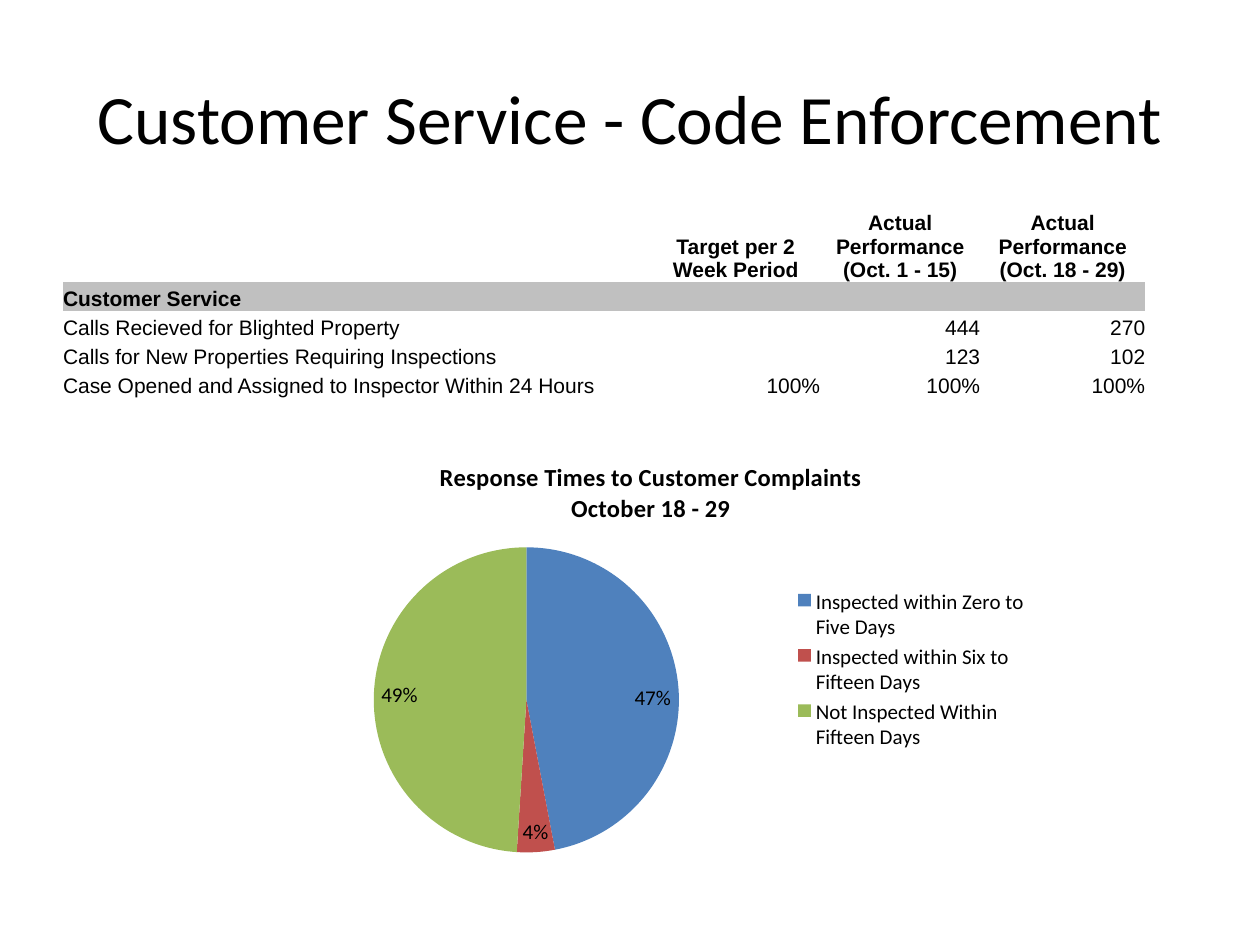
from lxml.etree import SubElement
from pptx import Presentation
from pptx.chart.data import CategoryChartData
from pptx.dml.color import RGBColor
from pptx.enum.chart import XL_CHART_TYPE as ChartType
from pptx.enum.chart import XL_LABEL_POSITION as LabelPos
from pptx.enum.chart import XL_LEGEND_POSITION as LegendPos
from pptx.enum.text import MSO_ANCHOR as Anchor
from pptx.enum.text import PP_ALIGN as Align
from pptx.oxml.ns import qn
from pptx.util import Inches, Pt

BLACK, WHITE, SILVER, GRAY = "000000", "FFFFFF", "C0C0C0", "BFBFBF"
PLAIN_TABLE = "{2D5ABB26-0587-4C30-8999-92F81FD0307C}"

COLUMNS = (4.67, 1.34, 1.27, 1.31)
HEADER_HEIGHT, ROW_HEIGHT = 0.66, 0.23
PERFORMANCE = (
    ("", "Target per 2 Week Period", "Actual Performance (Oct. 1 - 15)",
     "Actual Performance (Oct. 18 - 29)"),
    ("Customer Service", "", "", ""),
    ("Calls Recieved for Blighted Property", "", "444", "270"),
    ("Calls for New Properties Requiring Inspections", "", "123", "102"),
    ("Case Opened and Assigned to Inspector Within 24 Hours",
     "100%", "100%", "100%"),
)
ROW_FILLS = (
    (None,) * 4,
    (SILVER, SILVER, SILVER, GRAY),
    (WHITE, WHITE, WHITE, None),
    (WHITE,) * 4,
    (None,) * 4,
)
RESPONSES = (
    ("Inspected within Zero to Five Days", 47, "4F81BD"),
    ("Inspected within Six to Fifteen Days", 4, "C0504D"),
    ("Not Inspected Within Fifteen Days", 49, "9BBB59"),
)


def color(hex_code):
    return RGBColor.from_string(hex_code)


def style(font, size, face, bold=False):
    font.size, font.name, font.bold = Pt(size), face, bold
    font.color.rgb = color(BLACK)


def add_run(paragraph, text, size, face, bold=False):
    run = paragraph.add_run()
    run.text = text
    style(run.font, size, face, bold)


def add_title(slide, text):
    frame = slide.shapes.add_textbox(
        Inches(0.5), Inches(0.3), Inches(9), Inches(1.25)).text_frame
    frame.word_wrap = True
    frame.vertical_anchor = Anchor.MIDDLE
    heading = frame.paragraphs[0]
    heading.alignment = Align.CENTER
    add_run(heading, text, 39.6, "Calibri")


def fill_cell(cell, text, alignment, bold, fill):
    cell.margin_left = cell.margin_right = 0
    cell.margin_top = cell.margin_bottom = 0
    cell.vertical_anchor = Anchor.BOTTOM
    if fill:
        cell.fill.solid()
        cell.fill.fore_color.rgb = color(fill)
    else:
        cell.fill.background()
    paragraph = cell.text_frame.paragraphs[0]
    paragraph.alignment = alignment
    if text:
        add_run(paragraph, text, 12, "Arial", bold)
    else:  # keeps an empty cell from stretching its row
        SubElement(paragraph._p, qn("a:endParaRPr"), sz="1200")


def add_performance_table(slide):
    heights = [HEADER_HEIGHT] + [ROW_HEIGHT] * (len(PERFORMANCE) - 1)
    table = slide.shapes.add_table(
        len(heights), len(COLUMNS), Inches(0.5), Inches(1.58),
        Inches(sum(COLUMNS)), Inches(sum(heights))).table
    table.first_row = table.horz_banding = False
    table._tbl.tblPr.find(qn("a:tableStyleId")).text = PLAIN_TABLE
    for column, width in zip(table.columns, COLUMNS):
        column.width = Inches(width)
    for r, (texts, fills) in enumerate(zip(PERFORMANCE, ROW_FILLS)):
        table.rows[r].height = Inches(heights[r])
        for c, (text, fill) in enumerate(zip(texts, fills)):
            numeric = Align.CENTER if r == 0 else Align.RIGHT
            fill_cell(table.cell(r, c), text, numeric if c else Align.LEFT,
                      r < 2, fill)


def place(layout, target=None, **shares):
    """Fix a chart part at shares of the chart's size."""
    manual = SubElement(layout, qn("c:manualLayout"))
    if target:
        SubElement(manual, qn("c:layoutTarget"), val=target)
    for axis in "xy":
        SubElement(manual, qn(f"c:{axis}Mode"), val="edge")
    for side in "xywh":
        SubElement(manual, qn(f"c:{side}"), val=str(shares[side]))


def new_layout(parent, previous):
    layout = parent.makeelement(qn("c:layout"))
    parent.find(qn(previous)).addnext(layout)
    return layout


def add_response_pie(slide):
    data = CategoryChartData(number_format="0")
    data.categories = [name for name, _, _ in RESPONSES]
    data.add_series("Series 1", [share for _, share, _ in RESPONSES])
    chart = slide.shapes.add_chart(
        ChartType.PIE, Inches(2.08), Inches(3.5), Inches(6.17), Inches(3.67),
        data).chart
    style(chart.font, 10, "Calibri")

    # Title
    chart.has_title = True
    title = chart.chart_title.text_frame
    add_run(title.paragraphs[0], "Response Times to Customer Complaints",
            14, "Calibri", True)
    add_run(title.add_paragraph(), "October 18 - 29", 14, "Calibri", True)
    chart.chart_title.include_in_layout = False

    # Slices and their labels
    pie = chart.plots[0]
    pie.vary_by_categories = True
    for i, (_, _, slice_color) in enumerate(RESPONSES):
        slice_fill = pie.series[0].points[i].format.fill
        slice_fill.solid()
        slice_fill.fore_color.rgb = color(slice_color)
    labels = pie.series[0].data_labels
    labels.show_percentage, labels.show_value = True, False
    labels.number_format, labels.number_format_is_linked = "0%", False
    labels.position = LabelPos.INSIDE_END
    style(labels.font, 12, "Calibri")

    # Legend
    chart.has_legend = True
    legend = chart.legend
    legend.position = LegendPos.RIGHT
    legend.include_in_layout = False
    style(legend.font, 12, "Calibri")
    place(new_layout(legend._element, "c:legendPos"),
          x=0.68, y=0.31, w=0.31, h=0.37)

    # Plot area
    plot_area = chart._chartSpace.chart.plotArea
    layout = plot_area.find(qn("c:layout"))
    if layout is None:
        layout = plot_area.makeelement(qn("c:layout"))
        plot_area.insert(0, layout)
    place(layout, "inner", x=0.14, y=0.23, w=0.4, h=0.66)


def main():
    deck = Presentation()
    deck.slide_width, deck.slide_height = Inches(10), Inches(7.5)
    slide = deck.slides.add_slide(deck.slide_layouts[6])
    add_title(slide, "Customer Service - Code Enforcement")
    add_performance_table(slide)
    add_response_pie(slide)
    deck.save("out.pptx")


if __name__ == "__main__":
    main()
